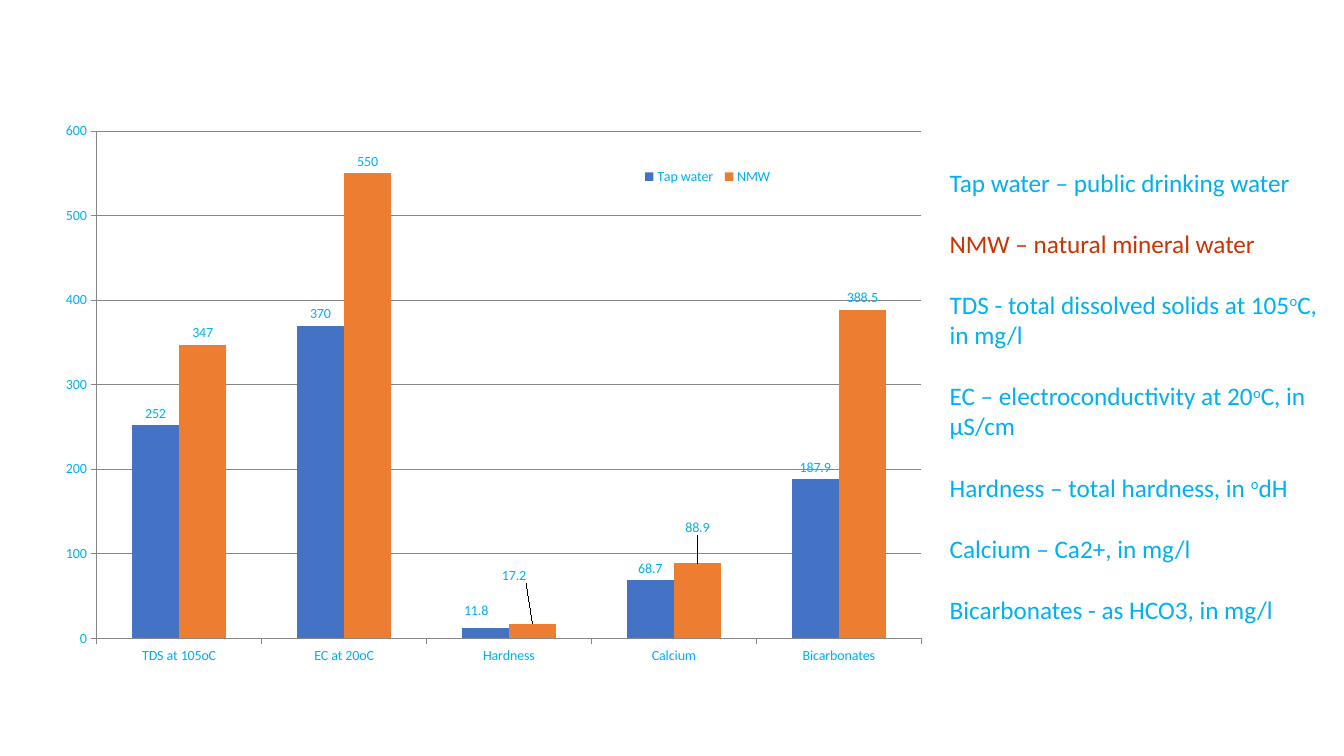
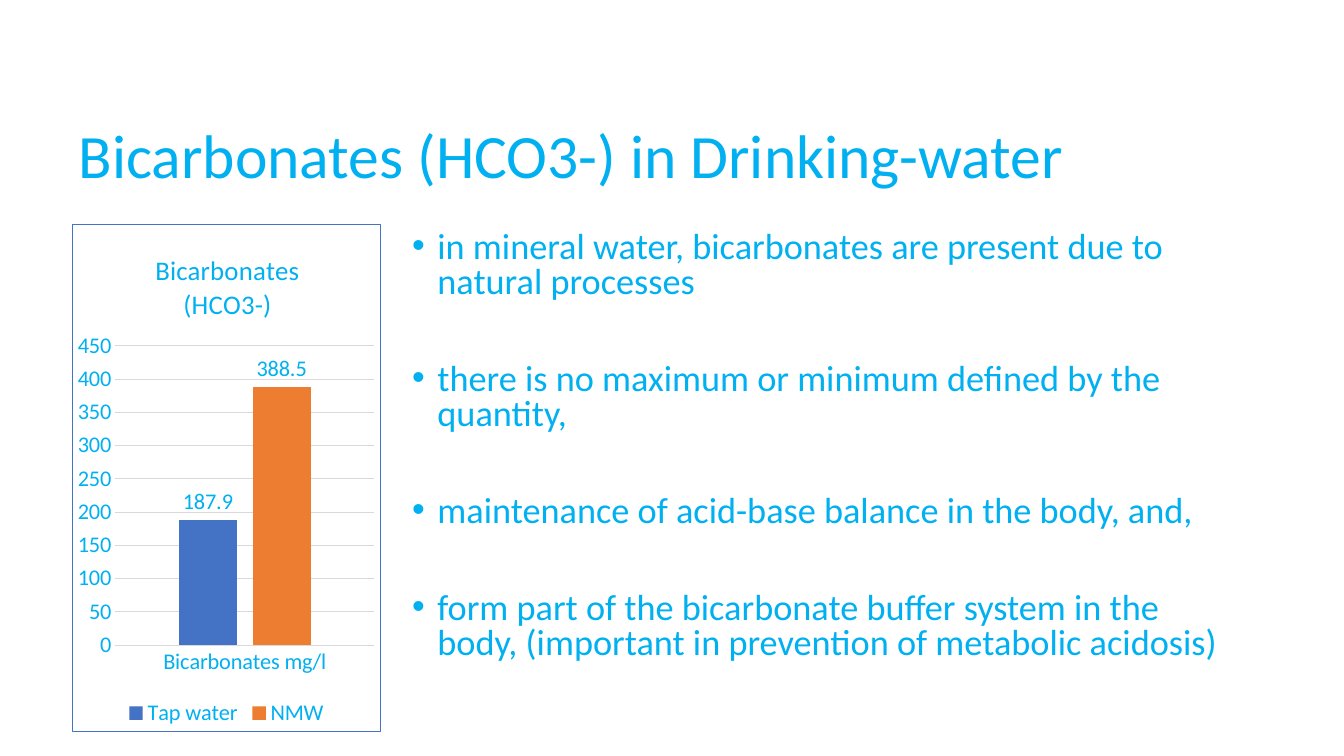
from pptx import Presentation
from pptx.chart.data import CategoryChartData
from pptx.dml.color import RGBColor
from pptx.enum.chart import (XL_CHART_TYPE as CT, XL_LABEL_POSITION as LP,
                             XL_LEGEND_POSITION as LG, XL_TICK_MARK as TM)
from pptx.enum.text import MSO_ANCHOR, MSO_AUTO_SIZE, PP_ALIGN
from pptx.oxml import parse_xml
from pptx.oxml.ns import nsdecls, qn
from pptx.util import Inches, Pt

COLORS = {"text": "00B0F0", "accent": "CC3300", "tap": "4472C4", "nmw": "ED7D31",
          "dark_grid": "868686", "light_grid": "D9D9D9"}
FONT = "Calibri"

TERMS = [
    ("Tap water – public drinking water", "text"),
    ("NMW – natural mineral water", "accent"),
    ("TDS - total dissolved solids at 105^o^C, in mg/l", "text"),
    ("EC – electroconductivity at 20^o^C, in μS/cm", "text"),
    ("Hardness – total hardness, in ^o^dH", "text"),
    ("Calcium – Ca2+, in mg/l", "text"),
    ("Bicarbonates - as HCO3, in mg/l", "text"),
]
TITLE = "Bicarbonates (HCO3-) in Drinking-water"
BULLETS = [
    "in mineral water, bicarbonates are present due to natural processes",
    "there is no maximum or minimum defined by the quantity,",
    "maintenance of acid-base balance in the body, and,",
    "form part of the bicarbonate buffer system in the body, "
    "(important in prevention of metabolic acidosis)",
]
SERIES_COLORS = {"Tap water": "tap", "NMW": "nmw"}
COMPARISON = {
    "at": (0.27, 1.04, 9.18, 5.94), "size": 10,
    "cats": ["TDS at 105oC", "EC at 20oC", "Hardness", "Calcium", "Bicarbonates"],
    "vals": [(252, 370, 11.8, 68.7, 187.9), (347, 550, 17.2, 88.9, 388.5)],
    "gap": 150, "overlap": 0, "top": 600, "step": 100,
    "grid": "dark_grid", "tick": TM.OUTSIDE, "value_line": True,
    "plot": (0.075, 0.044, 0.891, 0.847),
    "legend": LG.RIGHT, "legend_at": (0.66, 0.06, 0.15, 0.12),
    "shifts": {(0, 2): (-0.01, -0.01), (1, 2): (-0.02, -0.06), (1, 3): (0, -0.04)},
}
BICARBONATES = {
    "at": (0.71, 2.22, 3.07, 5.04), "size": 16,
    "cats": ["Bicarbonates mg/l"], "vals": [(187.9,), (388.5,)],
    "gap": 219, "overlap": -27, "top": 450, "step": 50,
    "grid": "light_grid", "tick": TM.NONE, "value_line": False,
    "plot": (0.14, 0.24, 0.84, 0.59),
    "legend": LG.BOTTOM, "border": "tap",
    "title": "Bicarbonates\n(HCO3-)", "title_size": 19.2, "title_at": (0.26, 0.05),
}


def rgb(name):
    return RGBColor.from_string(COLORS[name])


def style(font, size, color="text"):
    for key, value in {"name": FONT, "size": Pt(size), "bold": False}.items():
        setattr(font, key, value)
    font.color.rgb = rgb(color)


def set_line(line, color):
    line.color.rgb = rgb(color)
    line.width = Pt(0.75)


def set_layout(el, place, index=1, modes=("xMode", "yMode"), inner=False):
    for old in el.findall(qn("c:layout")):
        el.remove(old)
    parts = [("layoutTarget", "inner")] if inner else []
    parts += [(mode, "edge") for mode in modes]
    parts += zip("xywh", place)
    body = "".join(f'<c:{tag} val="{val}"/>' for tag, val in parts)
    el.insert(index, parse_xml(
        f'<c:layout {nsdecls("c")}><c:manualLayout>{body}</c:manualLayout></c:layout>'))


def add_border(chart, color):
    chart._chartSpace.find(qn("c:chart")).addnext(parse_xml(
        f'<c:spPr {nsdecls("c", "a")}><a:noFill/><a:ln w="9525"><a:solidFill>'
        f'<a:srgbClr val="{COLORS[color]}"/></a:solidFill></a:ln></c:spPr>'))


def add_columns(s, spec):
    data = CategoryChartData()
    data.categories = spec["cats"]
    for name, vals in zip(SERIES_COLORS, spec["vals"]):
        data.add_series(name, vals)
    box = [Inches(v) for v in spec["at"]]
    chart = s.shapes.add_chart(CT.COLUMN_CLUSTERED, *box, data).chart
    size = spec["size"]
    style(chart.font, size)

    plot = chart.plots[0]
    plot.vary_by_categories = False
    plot.gap_width, plot.overlap = spec["gap"], spec["overlap"]
    for series in plot.series:
        series.format.fill.solid()
        series.format.fill.fore_color.rgb = rgb(SERIES_COLORS[series.name])
        labels = series.data_labels
        labels.show_value, labels.position = True, LP.OUTSIDE_END
        style(labels.font, size)
    for (row, col), shift in spec.get("shifts", {}).items():
        series = plot.series[row]
        label = series.points[col].data_label
        label.position = LP.OUTSIDE_END
        style(label.font, size)
        el = series._element.xpath(f'c:dLbls/c:dLbl[c:idx/@val="{col}"]')[0]
        set_layout(el, shift, modes=())

    cat, val = chart.category_axis, chart.value_axis
    for axis in (cat, val):
        axis.major_tick_mark, axis.minor_tick_mark = spec["tick"], TM.NONE
        style(axis.tick_labels.font, size)
        set_line(axis.format.line, spec["grid"])
    if not spec["value_line"]:
        val.format.line.fill.background()
    val.minimum_scale, val.maximum_scale = 0, spec["top"]
    val.major_unit = spec["step"]
    val.has_major_gridlines = True
    set_line(val.major_gridlines.format.line, spec["grid"])
    set_layout(chart._chartSpace.chart.plotArea, spec["plot"], index=0, inner=True)

    chart.has_legend = True
    legend = chart.legend
    legend.position, legend.include_in_layout = spec["legend"], False
    style(legend.font, size)
    if "legend_at" in spec:
        set_layout(legend._element, spec["legend_at"])

    chart.has_title = "title" in spec
    if chart.has_title:
        tf = chart.chart_title.text_frame
        tf.text = spec["title"]
        for p in tf.paragraphs:
            style(p.runs[0].font, spec["title_size"])
        set_layout(chart.chart_title._element, spec["title_at"])
    if "border" in spec:
        add_border(chart, spec["border"])


def add_paragraphs(s, at, items, size, gap, spacing=None, bullet=False):
    tf = s.shapes.add_textbox(*[Inches(v) for v in at]).text_frame
    tf.word_wrap = True
    for i, (text, color) in enumerate(items):
        p = tf.paragraphs[0] if i == 0 else tf.add_paragraph()
        if bullet:
            pPr = p._p.get_or_add_pPr()
            pPr.set("marL", str(Inches(0.25)))
            pPr.set("indent", str(Inches(-0.25)))
            for tag in ('buFont typeface="Arial"', 'buChar char="•"'):
                pPr.append(parse_xml(f'<a:{tag} {nsdecls("a")}/>'))
        p.space_before = Pt(gap if i else 0)
        if spacing:
            p.line_spacing = spacing
        for j, part in enumerate(text.split("^")):
            if part:
                r = p.add_run()
                r.text = part
                style(r.font, size, color)
                if j % 2:
                    r._r.get_or_add_rPr().set("baseline", "30000")


def add_title(s, text):
    sp = s.shapes.title
    for key, value in zip(("left", "top", "width", "height"), (0.68, 1.03, 10.29, 1.09)):
        setattr(sp, key, Inches(value))
    tf = sp.text_frame
    tf.text = text
    tf.auto_size, tf.vertical_anchor = MSO_AUTO_SIZE.NONE, MSO_ANCHOR.MIDDLE
    p = tf.paragraphs[0]
    p.alignment, p.line_spacing = PP_ALIGN.LEFT, 0.9
    style(p.runs[0].font, 44)


def main():
    prs = Presentation()
    prs.slide_width, prs.slide_height = Inches(13.33), Inches(7.5)

    s = prs.slides.add_slide(prs.slide_layouts[6])
    add_columns(s, COMPARISON)
    add_paragraphs(s, (9.32, 1.61, 3.88, 4.64), TERMS, 18, gap=22)

    s = prs.slides.add_slide(prs.slide_layouts[5])
    add_title(s, TITLE)
    add_paragraphs(s, (3.99, 2.25, 8.21, 4.9), [(b, "text") for b in BULLETS],
                   25.9, gap=44.5, spacing=0.8, bullet=True)
    add_columns(s, BICARBONATES)

    prs.save("out.pptx")


if __name__ == "__main__":
    main()
